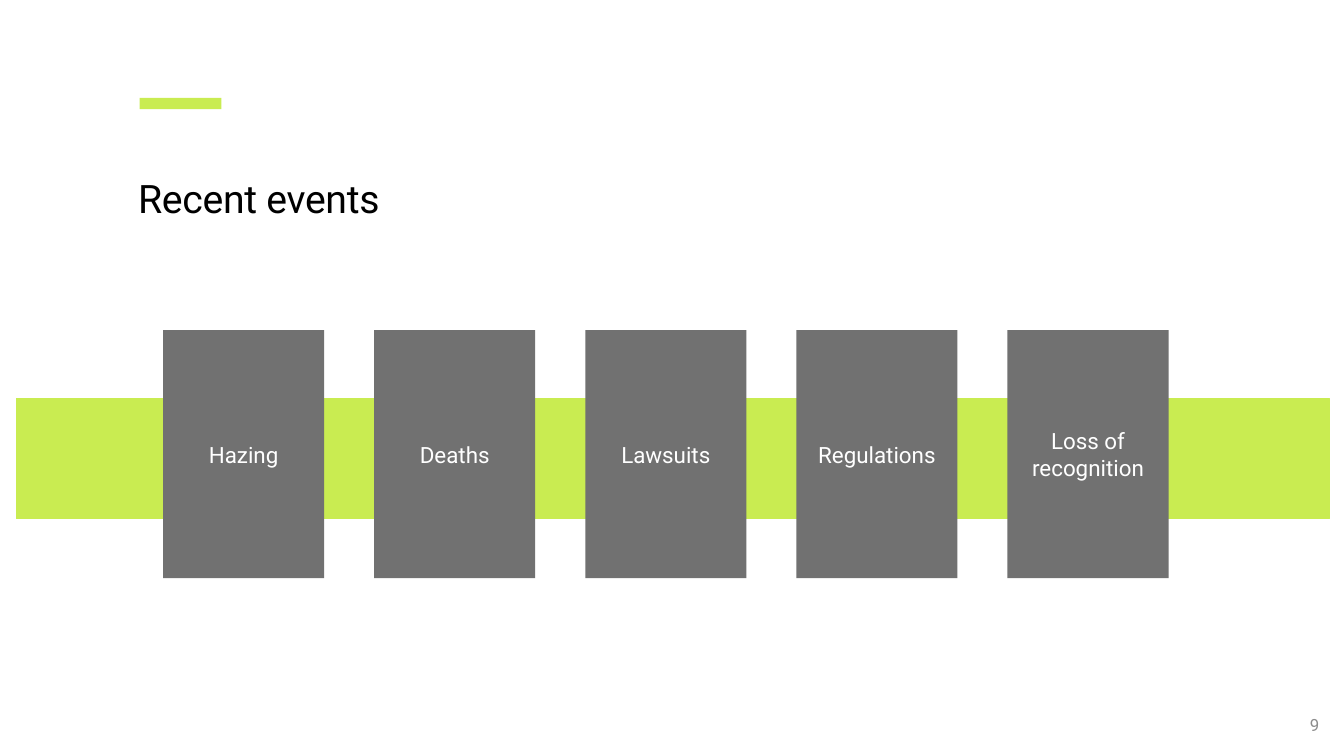
from pptx import Presentation
from pptx.dml.color import RGBColor
from pptx.enum.shapes import MSO_SHAPE
from pptx.enum.text import MSO_ANCHOR, PP_ALIGN
from pptx.util import Cm, Pt

RECTANGLE = MSO_SHAPE.RECTANGLE
TOP, MIDDLE = MSO_ANCHOR.TOP, MSO_ANCHOR.MIDDLE
LEFT, CENTER, RIGHT = PP_ALIGN.LEFT, PP_ALIGN.CENTER, PP_ALIGN.RIGHT

LIME = RGBColor(0xC9, 0xEC, 0x51)
CARD_GRAY = RGBColor(0x71, 0x71, 0x71)
NUMBER_GRAY = RGBColor(0x8C, 0x8C, 0x8C)
BLACK = RGBColor(0x00, 0x00, 0x00)
WHITE = RGBColor(0xFF, 0xFF, 0xFF)

EVENTS = ["Hazing", "Deaths", "Lawsuits", "Regulations", "Loss of recognition"]

deck = Presentation()
deck.slide_width, deck.slide_height = Cm(33.87), Cm(19.05)
page = deck.slides.add_slide(deck.slide_layouts[5])


def add_block(left, top, width, height, color):
    block = page.shapes.add_shape(RECTANGLE, Cm(left), Cm(top), Cm(width), Cm(height))
    block.shadow.inherit = False
    block.fill.solid()
    block.fill.fore_color.rgb = color
    block.line.fill.background()
    return block


def write(box, text, size, color, align, anchor, inset):
    frame = box.text_frame
    frame.word_wrap = True
    frame.vertical_anchor = anchor
    frame.margin_left = frame.margin_right = Cm(inset)
    frame.margin_top = frame.margin_bottom = Cm(inset)
    para = frame.paragraphs[0]
    para.alignment = align
    span = para.add_run()
    span.text = text
    span.font.name = "Roboto"
    span.font.size = Pt(size)
    span.font.color.rgb = color
    return span


# Accent bar and title
add_block(3.52, 2.47, 2.06, 0.28, LIME)
title = page.shapes.title
title.left, title.top, title.width, title.height = Cm(3.48), Cm(4.4), Cm(15.54), Cm(2.67)
title_span = write(title, "Recent events", 28, BLACK, LEFT, TOP, 0)
title_span.font._element.set("spc", "-20")

# Page number
number = page.shapes.add_textbox(Cm(25.88), Cm(17.75), Cm(7.62), Cm(1.02))
write(number, "9", 12, NUMBER_GRAY, RIGHT, MIDDLE, 0.25)

# Band behind the cards
band = add_block(0.41, 10.03, 33.37, 3.05, LIME)
band.width = Cm(33.37 - 0.27)
band.top, band.height = Cm(10.05), Cm(3.02)
band.line.color.rgb = LIME
band.line.width = Pt(1)

# Event cards at an even pitch
for index, event in enumerate(EVENTS):
    card = add_block(4.11 + 5.32 * index, 8.32, 4.06, 6.25, CARD_GRAY)
    write(card, event, 16, WHITE, CENTER, MIDDLE, 0.25)

deck.save("out.pptx")
